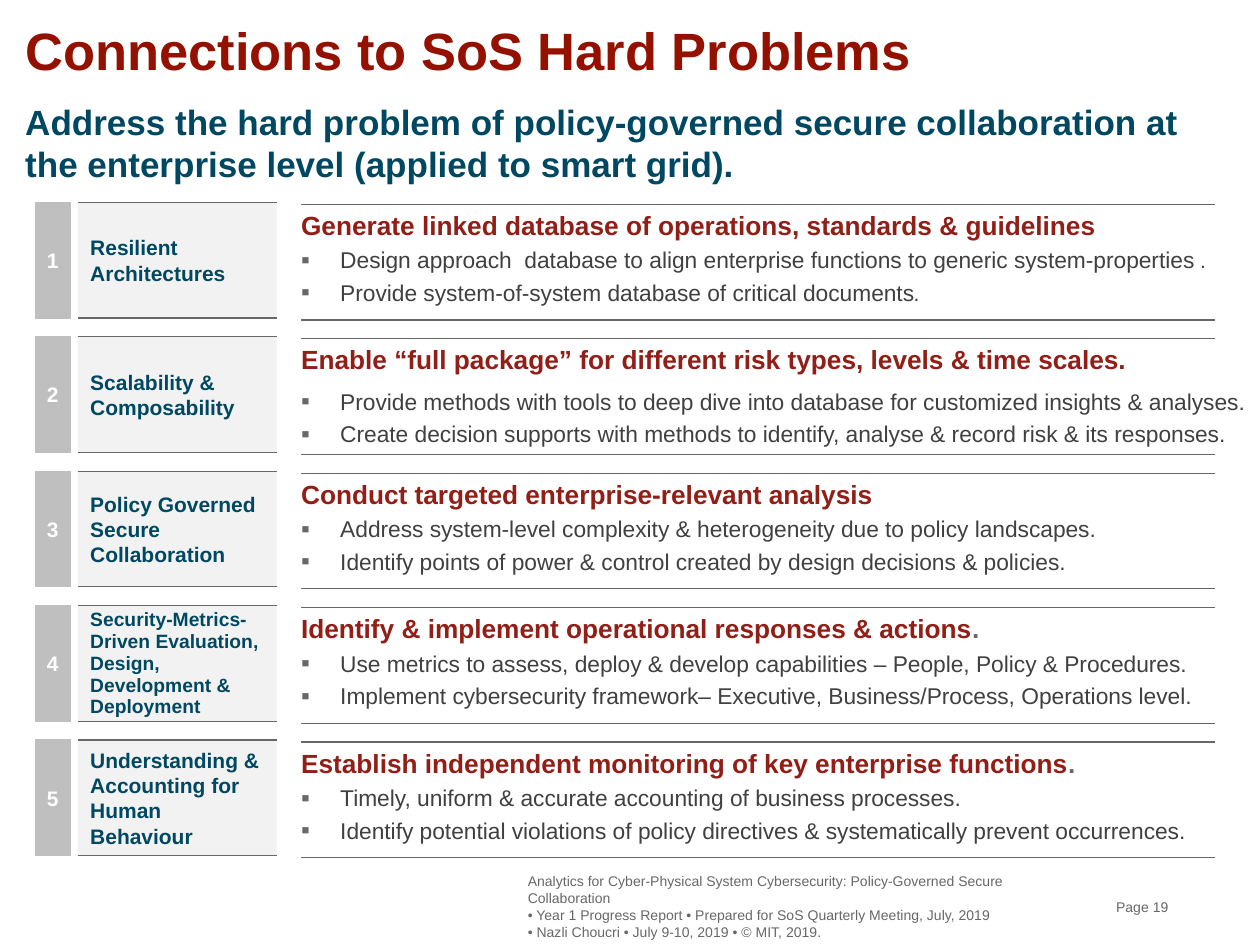
from dataclasses import dataclass

from lxml.etree import SubElement
from pptx import Presentation
from pptx.dml.color import RGBColor
from pptx.enum.shapes import MSO_CONNECTOR, MSO_SHAPE
from pptx.enum.text import MSO_ANCHOR, PP_ALIGN
from pptx.oxml.ns import qn
from pptx.util import Cm, Pt

FONT = "Arial"
TITLE_RED = RGBColor(0x94, 0x11, 0x00)
HEADING_RED = RGBColor(0x92, 0x1F, 0x17)
TEAL = RGBColor(0x00, 0x48, 0x62)
GREY = RGBColor(0x67, 0x67, 0x67)
DARK_GREY = RGBColor(0x40, 0x40, 0x40)
NUMBER_GREY = RGBColor(0xBF, 0xBF, 0xBF)
LABEL_GREY = RGBColor(0xF2, 0xF2, 0xF2)
WHITE = RGBColor(0xFF, 0xFF, 0xFF)

FIRST_ROW_TOP = 4.08
ROW_PITCH = 2.71
ROW_HEIGHT = 2.33
NUMBER_LEFT, NUMBER_WIDTH = 0.71, 0.71
LABEL_LEFT, LABEL_WIDTH = 1.57, 4.01
BODY_LEFT, BODY_RULE_WIDTH = 6.07, 18.42
BULLET_INDENT = 0.79


@dataclass(frozen=True)
class Problem:
    label: str
    heading: str
    bullets: tuple[str, ...]
    body_width: float
    body_height: float = 2.54
    label_size: int = 12
    label_spacing: float = 1.0
    heading_end: str = ""
    heading_gap: int = 0
    bullet_end: str = ""


PROBLEMS = (
    Problem(
        "Resilient Architectures",
        "Generate linked database of operations, standards & guidelines",
        ("Design approach  database to align enterprise functions to generic system-properties ",
         "Provide system-of-system database of critical documents"),
        body_width=18.36, body_height=2.41, bullet_end=".",
    ),
    Problem(
        "Scalability & Composability",
        "Enable “full package” for different risk types, levels & time scales.",
        ("Provide methods with tools to deep dive into database for customized insights & analyses.",
         "Create decision supports with methods to identify, analyse & record risk & its responses."),
        body_width=19.33, heading_gap=4,
    ),
    Problem(
        "Policy Governed Secure Collaboration",
        "Conduct targeted enterprise-relevant analysis",
        ("Address system-level complexity & heterogeneity due to policy landscapes.",
         "Identify points of power & control created by design decisions & policies."),
        body_width=18.36,
    ),
    Problem(
        "Security-Metrics-Driven Evaluation, Design, Development & Deployment",
        "Identify & implement operational responses & actions",
        ("Use metrics to assess, deploy & develop capabilities – People, Policy & Procedures.",
         "Implement cybersecurity framework– Executive, Business/Process, Operations level."),
        body_width=18.59, body_height=2.87, label_size=11, label_spacing=0.95, heading_end=".",
    ),
    Problem(
        "Understanding & Accounting for Human Behaviour",
        "Establish independent monitoring of key enterprise functions",
        ("Timely, uniform & accurate accounting of business processes.",
         "Identify potential violations of policy directives & systematically prevent occurrences."),
        body_width=18.82, heading_end=".",
    ),
)


def set_frame(shape, margins=(0, 0, 0, 0), anchor=MSO_ANCHOR.TOP):
    """Set wrapping, anchor and the left, top, right, bottom margins in cm."""
    frame = shape.text_frame
    frame.word_wrap = True
    frame.vertical_anchor = anchor
    (frame.margin_left, frame.margin_top,
     frame.margin_right, frame.margin_bottom) = (Cm(margin) for margin in margins)
    return frame


def add_text_box(slide, left: float, top: float, width: float, height: float, **frame_format):
    box = slide.shapes.add_textbox(Cm(left), Cm(top), Cm(width), Cm(height))
    return set_frame(box, **frame_format)


def add_run(paragraph, text: str, *, size: int, color: RGBColor, bold: bool = False) -> None:
    run = paragraph.add_run()
    run.text = text
    font = run.font
    font.name, font.size, font.bold = FONT, Pt(size), bold
    font.color.rgb = color


def add_bullet(paragraph) -> None:
    properties = paragraph._p.get_or_add_pPr()
    properties.set("marL", str(Cm(BULLET_INDENT)))
    properties.set("indent", str(-Cm(BULLET_INDENT)))
    SubElement(SubElement(properties, qn("a:buClr")), qn("a:srgbClr"), val=str(GREY))
    SubElement(properties, qn("a:buSzPct"), val="110000")
    SubElement(properties, qn("a:buFont"), typeface=FONT)
    SubElement(properties, qn("a:buChar"), char="▪")


def write(frame, text: str, *, align=PP_ALIGN.LEFT, before: int = 0, after: int = 0,
          line_spacing: float = 1.0, bullet: bool = False, **font_format):
    """Fill the empty first paragraph, or append one, and return it."""
    paragraph = frame.paragraphs[0] if not frame.text else frame.add_paragraph()
    if bullet:
        add_bullet(paragraph)
    paragraph.alignment = align
    paragraph.line_spacing = line_spacing
    paragraph.space_before, paragraph.space_after = Pt(before), Pt(after)
    add_run(paragraph, text, **font_format)
    return paragraph


def add_panel(slide, left: float, top: float, width: float, color: RGBColor):
    panel = slide.shapes.add_shape(
        MSO_SHAPE.RECTANGLE, Cm(left), Cm(top), Cm(width), Cm(ROW_HEIGHT))
    panel.shadow.inherit = False
    panel.fill.solid()
    panel.fill.fore_color.rgb = color
    panel.line.fill.background()
    return panel


def add_rules(slide, left: float, top: float, width: float) -> None:
    """Draw the lines that close a row above and below."""
    for height in (top, top + ROW_HEIGHT):
        rule = slide.shapes.add_connector(
            MSO_CONNECTOR.STRAIGHT, Cm(left), Cm(height), Cm(left + width), Cm(height))
        rule.line.color.rgb = GREY
        rule.line.width = Pt(0.75)
        SubElement(rule._element.spPr, qn("a:effectLst"))


def add_problem(slide, number: int, problem: Problem) -> None:
    top = FIRST_ROW_TOP + (number - 1) * ROW_PITCH

    number_panel = add_panel(slide, NUMBER_LEFT, top, NUMBER_WIDTH, NUMBER_GREY)
    number_panel.line.color.rgb = NUMBER_GREY
    number_panel.line.width = Pt(0.75)
    write(set_frame(number_panel, anchor=MSO_ANCHOR.MIDDLE), str(number),
          align=PP_ALIGN.CENTER, size=12, color=WHITE, bold=True)

    label_panel = add_panel(slide, LABEL_LEFT, top, LABEL_WIDTH, LABEL_GREY)
    label_frame = set_frame(label_panel, margins=(0.25, 0, 0.25, 0), anchor=MSO_ANCHOR.MIDDLE)
    write(label_frame, problem.label, line_spacing=problem.label_spacing,
          size=problem.label_size, color=TEAL, bold=True)
    add_rules(slide, LABEL_LEFT, top, LABEL_WIDTH)

    body = add_text_box(slide, BODY_LEFT, top - 0.16, problem.body_width,
                        problem.body_height, margins=(0, 0.3, 0, 0))
    heading = write(body, problem.heading, after=problem.heading_gap,
                    size=15, color=HEADING_RED, bold=True)
    if problem.heading_end:
        add_run(heading, problem.heading_end, size=15, color=GREY, bold=True)
    for text in problem.bullets:
        paragraph = write(body, text, bullet=True, before=3, size=13, color=DARK_GREY)
        if problem.bullet_end:
            add_run(paragraph, problem.bullet_end, size=12, color=DARK_GREY)
    add_rules(slide, BODY_LEFT, top + 0.04, BODY_RULE_WIDTH)


def add_footer(slide) -> None:
    footer_format = {"margins": (0.2, 0.1, 0.2, 0.1), "anchor": MSO_ANCHOR.MIDDLE}
    page = add_text_box(slide, 22.3, 17.68, 1.73, 1.19, **footer_format)
    write(page, "Page 19", size=8, color=GREY)
    report = add_text_box(slide, 10.44, 17.68, 11.6, 1.19, **footer_format)
    for text in (
        "Analytics for Cyber-Physical System Cybersecurity: Policy-Governed Secure Collaboration",
        "• Year 1 Progress Report • Prepared for SoS Quarterly Meeting, July, 2019",
        "• Nazli Choucri • July 9-10, 2019 • © MIT, 2019.",
    ):
        write(report, text, size=8, color=GREY)


def main() -> None:
    presentation = Presentation()
    presentation.slide_width, presentation.slide_height = Cm(25.4), Cm(19.05)
    slide = presentation.slides.add_slide(presentation.slide_layouts[6])

    title = add_text_box(slide, 0.51, 0.28, 24.38, 1.35, anchor=MSO_ANCHOR.BOTTOM)
    write(title, "Connections to SoS Hard Problems", size=30, color=TITLE_RED, bold=True)
    subtitle = add_text_box(slide, 0.51, 2.03, 23.57, 1.5)
    write(subtitle, "Address the hard problem of policy-governed secure collaboration at "
          "the enterprise level (applied to smart grid).", size=20, color=TEAL, bold=True)

    for number, problem in enumerate(PROBLEMS, start=1):
        add_problem(slide, number, problem)
    add_footer(slide)
    presentation.save("out.pptx")


if __name__ == "__main__":
    main()
